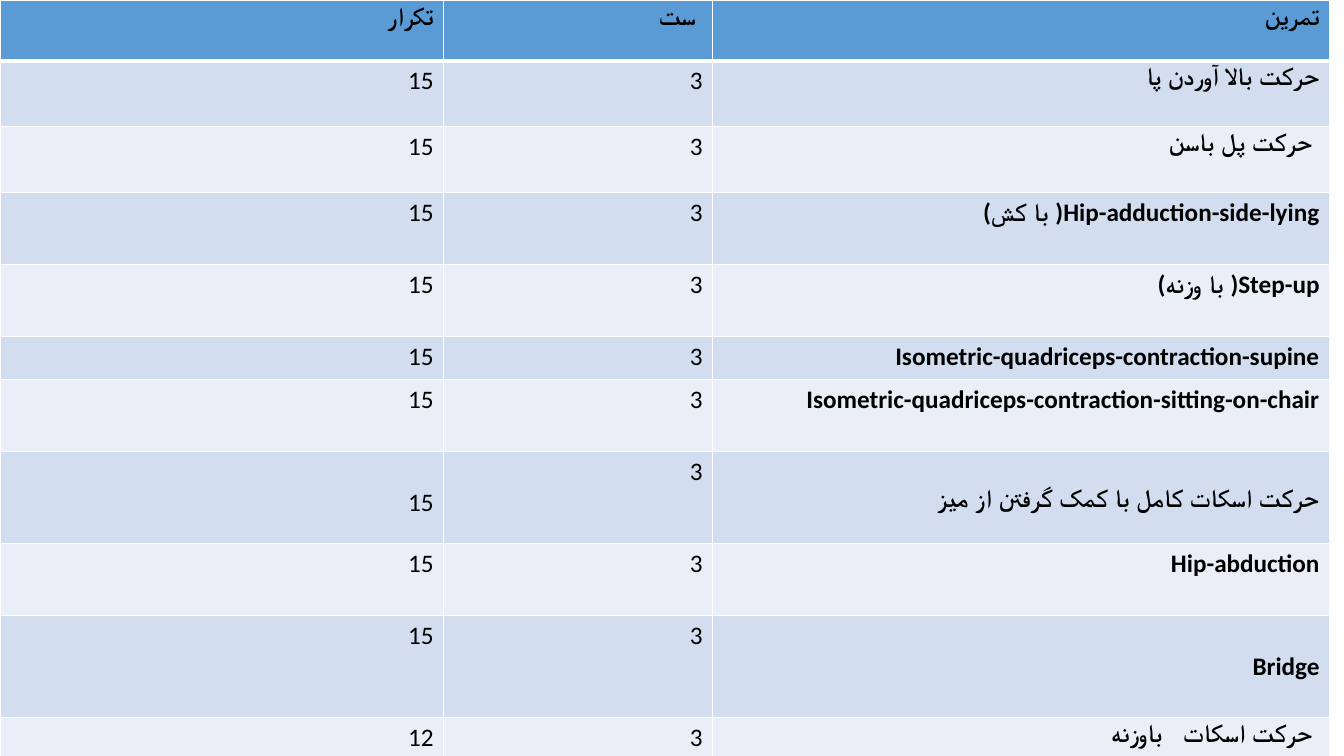
from lxml.etree import SubElement
from pptx import Presentation
from pptx.dml.color import RGBColor
from pptx.enum.text import PP_ALIGN
from pptx.oxml.ns import qn
from pptx.util import Cm, Pt

COLORS = {"head": "5B9BD5", "odd": "D2DEEF", "even": "EAEFF7",
          "line": "FFFFFF", "text": "000000"}

# Repetitions, sets, exercise, row height in cm
ROWS = [
    ("تکرار", "ست ", "تمرین", 1.53),
    ("15", "3", "حرکت بالا آوردن پا", 1.66),
    ("15", "3", "حرکت پل باسن ", 1.66),
    ("15", "3", "(با کش )Hip-adduction-side-lying", 1.81),
    ("15", "3", "(با وزنه )Step-up", 1.81),
    ("15", "3", "Isometric-quadriceps-contraction-supine", 1.1),
    ("15", "3", " Isometric-quadriceps-contraction-sitting-on-chair", 1.81),
    ("15", "3", "حرکت اسکات کامل با کمک گرفتن از میز", 2.32),
    ("15", "3", "Hip-abduction", 1.81),
    ("15", "3", "Bridge", 2.57),
    ("12", "3", "حرکت اسکات   باوزنه ", 1.02),
]
WIDTHS = [11.18, 6.78, 15.55]
LOWER = {(7, 0), (7, 2), (9, 2)}  # cells whose text starts one line down


def border(cell, side, width):
    line = SubElement(cell._tc.get_or_add_tcPr(), qn(f"a:ln{side}"),
                      w=str(Pt(width)))
    fill = SubElement(line, qn("a:solidFill"))
    SubElement(fill, qn("a:srgbClr"), val=COLORS["line"])


# Slide
deck = Presentation()
deck.slide_width, deck.slide_height = Cm(33.87), Cm(19.05)
slide = deck.slides.add_slide(deck.slide_layouts[6])

# Table grid
total = sum(row[3] for row in ROWS)
table = slide.shapes.add_table(len(ROWS), len(WIDTHS), Cm(0), Cm(0),
                               Cm(sum(WIDTHS)), Cm(total)).table
for col, width in zip(table.columns, WIDTHS):
    col.width = Cm(width)

# Cells
for r, (*texts, height) in enumerate(ROWS):
    table.rows[r].height = Cm(height)
    shade = "head" if r == 0 else "odd" if r % 2 else "even"
    for c, text in enumerate(texts):
        cell = table.cell(r, c)
        border(cell, "L", 1)
        border(cell, "R", 1)
        border(cell, "T", 3 if r == 1 else 1)
        border(cell, "B", 3 if r == 0 else 1)
        cell.fill.solid()
        cell.fill.fore_color.rgb = RGBColor.from_string(COLORS[shade])
        if (r, c) in LOWER:
            cell.margin_top = Cm(0.9)
        cell.text_frame.text = text
        para = cell.text_frame.paragraphs[0]
        para.alignment = PP_ALIGN.RIGHT
        font = para.runs[0].font
        font.name, font.size = "Calibri", Pt(18)
        font.bold = r == 0 or c == 2
        font.color.rgb = RGBColor.from_string(COLORS["text"])

deck.save("out.pptx")
